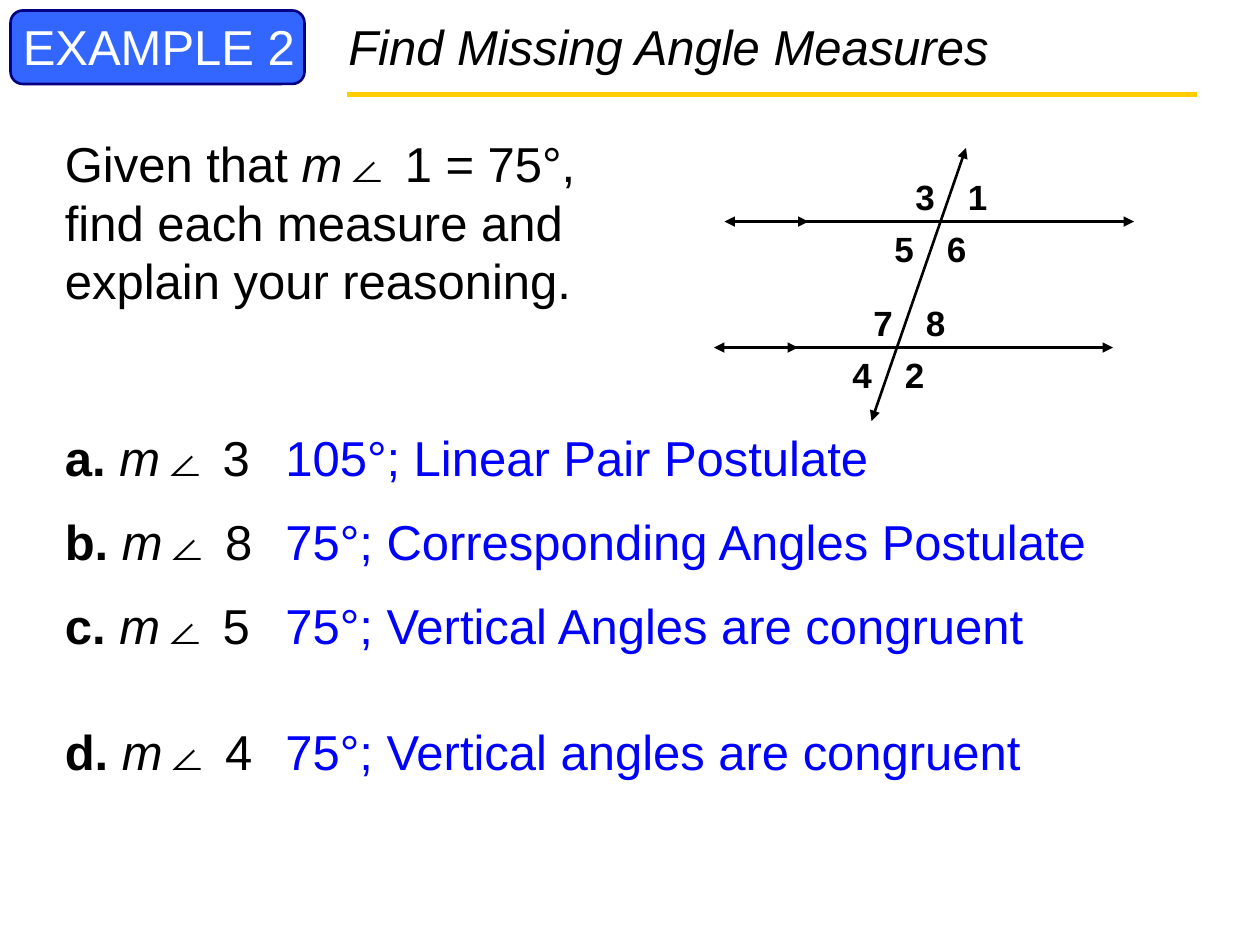
from lxml import etree
from pptx import Presentation
from pptx import util as u
from pptx.dml.color import RGBColor
from pptx.enum import shapes, text
from pptx.oxml.ns import qn

CELL = u.Inches(1) / 12  # the slide is a grid of 120 columns by 90 rows
COLORS = {"ink": "000000", "badge": "3366FF", "badge_edge": "000080",
          "badge_text": "FFFFFF", "rule": "FFCC00", "answer": "0000FF"}


def grid(*cells):
    return [round(n * CELL) for n in cells]


def color(name):
    return RGBColor.from_string(COLORS[name])


def add_text(slide, box, runs, ink="ink", size=28):
    """Write (wording, style) runs in one paragraph; style holds b and/or i."""
    frame = slide.shapes.add_textbox(*grid(*box)).text_frame
    frame.word_wrap = True
    frame.auto_size = text.MSO_AUTO_SIZE.SHAPE_TO_FIT_TEXT
    for wording, style in runs:
        run = frame.paragraphs[0].add_run()
        run.text = wording
        run.font.name, run.font.size = "Arial", u.Pt(size)
        run.font.bold, run.font.italic = "b" in style, "i" in style
        run.font.color.rgb = color(ink)


def add_line(slide, ends, ink="ink", weight=1.5, arrows=()):
    """Draw a line; arrows names the ends (headEnd, tailEnd) that are pointed."""
    line = slide.shapes.add_connector(shapes.MSO_CONNECTOR.STRAIGHT, *grid(*ends))
    line.line.color.rgb = color(ink)
    line.line.width = u.Pt(weight)
    outline = line.line._get_or_add_ln()
    for end in arrows:
        etree.SubElement(outline, qn(f"a:{end}"), type="triangle")
    etree.SubElement(line._element.spPr, qn("a:effectLst"))


def add_header(slide, left, top, width):
    badge = slide.shapes.add_shape(shapes.MSO_SHAPE.ROUNDED_RECTANGLE,
                                   *grid(left, top, 28, 7))
    badge.shadow.inherit = False
    badge.fill.solid()
    badge.fill.fore_color.rgb = color("badge")
    badge.line.color.rgb = color("badge_edge")
    badge.line.width = u.Pt(1.5)
    add_text(slide, (left, top, 29, 6.8), [("EXAMPLE 2", "")], "badge_text")
    add_text(slide, (left + 31, top, 85, 6.8),
             [("Find Missing Angle Measures", "i")])
    add_line(slide, (left + 32, top + 8, left + width, top + 8), "rule", 3)


def add_diagram(slide, left, top):
    """Two parallel lines cut by a transversal, with the eight angles numbered."""
    both = ("headEnd", "tailEnd")
    add_line(slide, (left + 24, top, left + 15, top + 26), arrows=both)
    parallels = [(1, 40, 7), (0, 38, 19)]
    for start, end, row in parallels:
        x, y = left + start, top + row
        add_line(slide, (x, y, left + end, y), arrows=both)
        add_line(slide, (x + 2, y, x + 8, y), arrows=("tailEnd",))
    angle_pairs = [("31", 18, 2), ("56", 16, 7), ("78", 14, 14), ("42", 12, 19)]
    for pair, column, row in angle_pairs:
        for step, angle in enumerate(pair):
            add_text(slide, (left + column + 5 * step, top + row, 5, 5.2),
                     [(angle, "b")], size=20)


def add_question(slide, left, top, letter, angle, answer):
    add_text(slide, (left, top, 21, 6.8),
             [(f"{letter}. ", "b"), ("m∠", "i"), (f" {angle}", "")])
    add_text(slide, (left + 21, top, 92, 6.8), [(answer, "")], "answer")


def build():
    deck = Presentation()
    deck.slide_width, deck.slide_height = grid(120, 90)
    slide = deck.slides.add_slide(deck.slide_layouts[6])
    add_header(slide, 1, 1, 113)
    add_text(slide, (5, 12.1, 52, 18),
             [("Given that ", ""), ("m∠", "i"),
              (" 1 = 75°, find each measure and explain your reasoning.", "")])
    add_diagram(slide, 68, 14.1)
    questions = [
        (40.1, "a", 3, "105°; Linear Pair Postulate"),
        (48.1, "b", 8, "75°; Corresponding Angles Postulate"),
        (56.1, "c", 5, "75°; Vertical Angles are congruent"),
        (68.1, "d", 4, "75°; Vertical angles are congruent"),
    ]
    for row, letter, angle, answer in questions:
        add_question(slide, 5, row, letter, angle, answer)
    deck.save("out.pptx")


if __name__ == "__main__":
    build()
